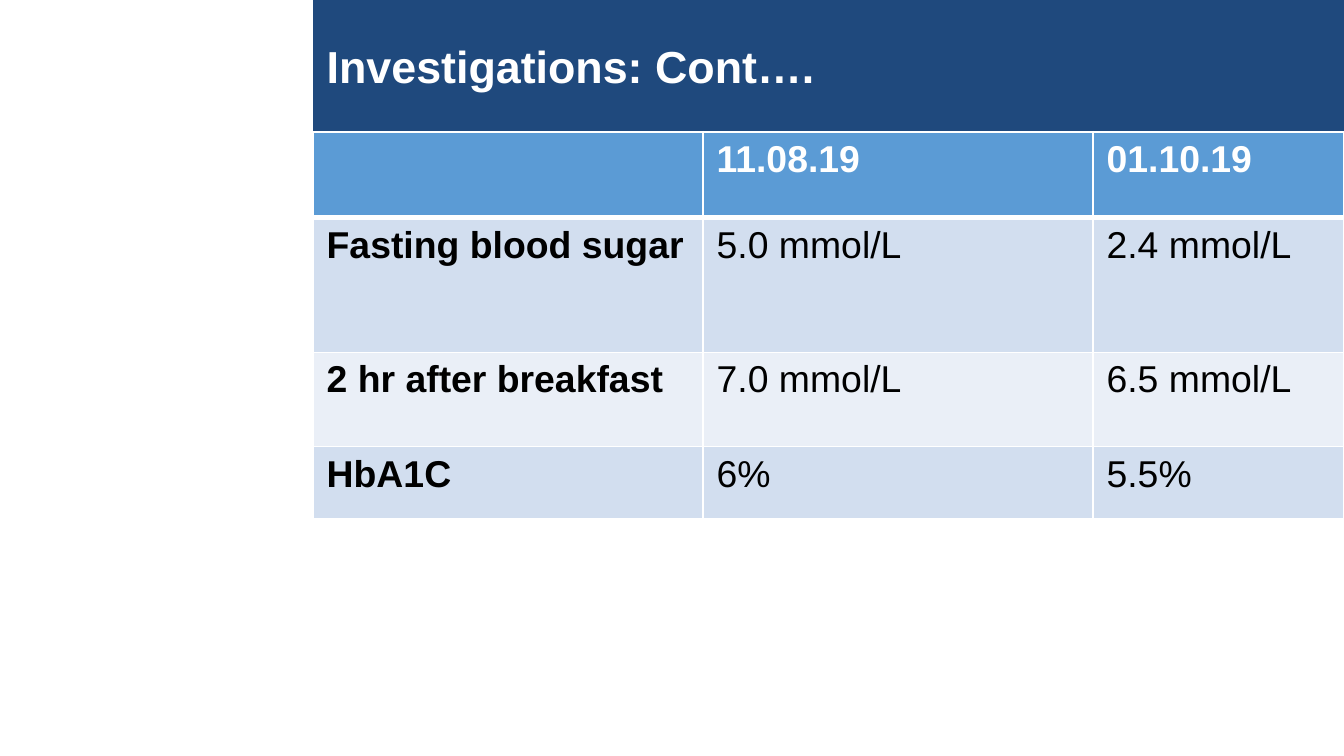
from lxml import etree
from pptx import Presentation
from pptx.dml.color import RGBColor
from pptx.enum.text import MSO_ANCHOR, PP_ALIGN
from pptx.oxml.ns import qn
from pptx.util import Cm, Pt

LEFT = PP_ALIGN.LEFT
MIDDLE = MSO_ANCHOR.MIDDLE

WHITE = RGBColor(0xFF, 0xFF, 0xFF)
BLACK = RGBColor(0x00, 0x00, 0x00)
NAVY = RGBColor(0x1F, 0x49, 0x7D)
HEADER_BLUE = RGBColor(0x5B, 0x9B, 0xD5)
BAND_DARK = RGBColor(0xD2, 0xDE, 0xEF)
BAND_LIGHT = RGBColor(0xEA, 0xEF, 0xF7)

FONT = "Arial"
CONTENT_LEFT = Cm(5.92)
CONTENT_WIDTH = Cm(19.48)
TITLE_HEIGHT = Cm(2.49)
COLUMN_WIDTHS = [Cm(7.37), Cm(7.37), Cm(4.74)]
ROW_HEIGHTS = [Cm(1.63), Cm(2.54), Cm(1.78), Cm(1.37)]

RESULTS = [
    ["", "11.08.19", "01.10.19"],
    ["Fasting blood sugar", "5.0 mmol/L", "2.4 mmol/L"],
    ["2 hr after breakfast", "7.0 mmol/L", "6.5 mmol/L"],
    ["HbA1C", "6%", "5.5%"],
]


def style_paragraph(paragraph, size, color, bold):
    paragraph.alignment = LEFT
    font = paragraph.font
    font.name = FONT
    font.size = Pt(size)
    font.bold = bold
    font.color.rgb = color


def add_title(slide, text):
    title = slide.shapes.title
    title.left, title.top = CONTENT_LEFT, 0
    title.width, title.height = CONTENT_WIDTH, TITLE_HEIGHT
    title.fill.solid()
    title.fill.fore_color.rgb = NAVY
    title.text_frame.text = text
    title.text_frame.word_wrap = True
    title.text_frame.vertical_anchor = MIDDLE
    style_paragraph(title.text_frame.paragraphs[0], 24, WHITE, True)


def set_borders(cell, top, bottom):
    properties = cell._tc.get_or_add_tcPr()
    widths = {"a:lnL": 1, "a:lnR": 1, "a:lnT": top, "a:lnB": bottom}
    for position, (side, width) in enumerate(widths.items()):
        line = etree.Element(qn(side), w=str(Pt(width)))
        fill = etree.SubElement(line, qn("a:solidFill"))
        etree.SubElement(fill, qn("a:srgbClr"), val=str(WHITE))
        properties.insert(position, line)


def fill_cell(cell, text, row, column):
    is_header = row == 0
    cell.fill.solid()
    if is_header:
        cell.fill.fore_color.rgb = HEADER_BLUE
    else:
        cell.fill.fore_color.rgb = BAND_DARK if row % 2 else BAND_LIGHT
    set_borders(cell, 3 if row == 1 else 1, 3 if is_header else 1)
    cell.text = text
    style_paragraph(cell.text_frame.paragraphs[0], 20,
                    WHITE if is_header else BLACK, is_header or column == 0)


def add_results_table(slide):
    table = slide.shapes.add_table(
        len(ROW_HEIGHTS), len(COLUMN_WIDTHS), CONTENT_LEFT, TITLE_HEIGHT,
        CONTENT_WIDTH, sum(ROW_HEIGHTS)).table
    for column, width in zip(table.columns, COLUMN_WIDTHS):
        column.width = width
    for row, height in zip(table.rows, ROW_HEIGHTS):
        row.height = height
    for row, values in enumerate(RESULTS):
        for column, text in enumerate(values):
            fill_cell(table.cell(row, column), text, row, column)


def main():
    presentation = Presentation()
    presentation.slide_width = Cm(25.4)
    presentation.slide_height = Cm(14.29)
    slide = presentation.slides.add_slide(presentation.slide_layouts[5])
    add_title(slide, "Investigations: Cont….")
    add_results_table(slide)
    presentation.save("out.pptx")


if __name__ == "__main__":
    main()
